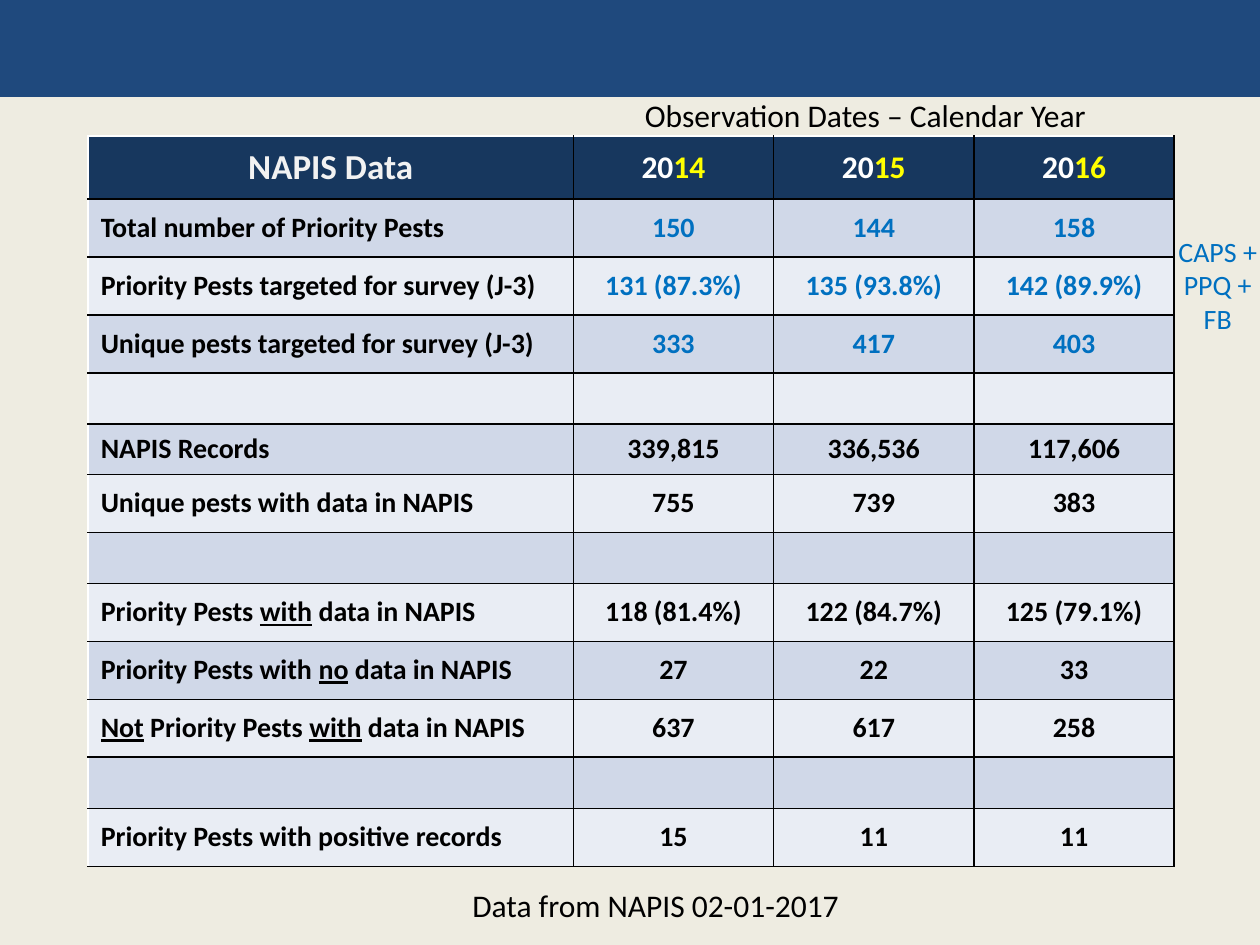
"""Build the NAPIS priority pest data slide."""
import lxml.etree
import pptx
import pptx.dml.color
import pptx.enum.shapes
import pptx.enum.text
import pptx.oxml.ns
import pptx.util

WIDTH, HEIGHT = 10, 7.5
NAVY, BLACK, WHITE, BLUE, YELLOW = "17375E", "000000", "FFFFFF", "0070C0", "FFFF00"
BANDS = ["E9EDF4", "D0D8E8"]
HEADING = "NAPIS Data"
YEARS = ["14", "15", "16"]
BLANK = ("", ["", "", ""], 0.4, BLACK)
# Underlined words stand between underscores.
RECORDS = [
    ("Total number of Priority Pests", ["150", "144", "158"], 0.46, BLUE),
    ("Priority Pests targeted for survey (J-3)",
     ["131 (87.3%)", "135 (93.8%)", "142 (89.9%)"], 0.46, BLUE),
    ("Unique pests targeted for survey (J-3)", ["333", "417", "403"], 0.46, BLUE),
    BLANK,
    ("NAPIS Records", ["339,815", "336,536", "117,606"], 0.4, BLACK),
    ("Unique pests with data in NAPIS", ["755", "739", "383"], 0.46, BLACK),
    BLANK,
    ("Priority Pests _with_ data in NAPIS",
     ["118 (81.4%)", "122 (84.7%)", "125 (79.1%)"], 0.46, BLACK),
    ("Priority Pests with _no_ data in NAPIS", ["27", "22", "33"], 0.46, BLACK),
    ("_Not_ Priority Pests _with_ data in NAPIS", ["637", "617", "258"], 0.46, BLACK),
    BLANK,
    ("Priority Pests with positive records", ["15", "11", "11"], 0.46, BLACK),
]
CAPTIONS = [
    (["Data from NAPIS 02-01-2017"], (3.65, 6.98, 3.14, 0.4), 18, BLACK),
    (["Observation Dates – Calendar Year"], (5.02, 0.71, 3.74, 0.4), 18, BLACK),
    (["CAPS +", "PPQ +", "FB"], (9.25, 1.81, 0.83, 0.91), 16, BLUE),
]
TABLE_LEFT, TABLE_TOP = 0.7, 1.08
COLUMNS = [3.85] + [1.59] * len(YEARS)
HEIGHTS = [0.5] + [height for _, _, height, _ in RECORDS]
CENTER = pptx.enum.text.PP_ALIGN.CENTER
LEFT = pptx.enum.text.PP_ALIGN.LEFT


def color(value):
    return pptx.dml.color.RGBColor.from_string(value)


def inches(values):
    return [pptx.util.Inches(value) for value in values]


def paint(fill, value):
    fill.solid()
    fill.fore_color.rgb = color(value)


def add_run(paragraph, text, size, value, bold=False, underline=False):
    run = paragraph.add_run()
    run.text = text
    font = run.font
    font.name, font.size, font.bold = "Calibri", pptx.util.Pt(size), bold
    font.color.rgb = color(value)
    if underline:
        font.underline = True


def set_borders(cell, left, top):
    properties = cell._tc.get_or_add_tcPr()
    edges = [("lnL", left), ("lnR", BLACK), ("lnT", top), ("lnB", BLACK)]
    for position, (tag, value) in enumerate(edges):
        line = lxml.etree.Element(pptx.oxml.ns.qn("a:" + tag), w="12700")
        fill = lxml.etree.SubElement(line, pptx.oxml.ns.qn("a:solidFill"))
        lxml.etree.SubElement(fill, pptx.oxml.ns.qn("a:srgbClr"), val=value)
        properties.insert(position, line)


def fill_cell(cell, runs, size, align, background, left, top):
    paint(cell.fill, background)
    set_borders(cell, left, top)
    cell.vertical_anchor = pptx.enum.text.MSO_ANCHOR.MIDDLE
    paragraph = cell.text_frame.paragraphs[0]
    paragraph.alignment = align
    for text, value, underline in runs:
        if text:
            add_run(paragraph, text, size, value, True, underline)


def add_pest_table(slide):
    frame = slide.shapes.add_table(
        len(HEIGHTS), len(COLUMNS),
        *inches([TABLE_LEFT, TABLE_TOP, sum(COLUMNS), sum(HEIGHTS)]))
    table = frame.table
    for column, width in zip(table.columns, inches(COLUMNS)):
        column.width = width
    for row, height in zip(table.rows, inches(HEIGHTS)):
        row.height = height

    fill_cell(table.cell(0, 0), [(HEADING, "F2F2F2", False)], 20, CENTER, NAVY, WHITE, WHITE)
    for column, year in enumerate(YEARS, 1):
        runs = [("20", WHITE, False), (year, YELLOW, False)]
        fill_cell(table.cell(0, column), runs, 18, CENTER, NAVY, BLACK, WHITE)

    for row, (label, counts, _, value) in enumerate(RECORDS, 1):
        band = BANDS[row % 2]
        runs = [(part, BLACK, index % 2 == 1) for index, part in enumerate(label.split("_"))]
        fill_cell(table.cell(row, 0), runs, 16, LEFT, band, WHITE, BLACK)
        for column, count in enumerate(counts, 1):
            fill_cell(table.cell(row, column), [(count, value, False)], 16, CENTER,
                      band, BLACK, BLACK)


def add_caption(slide, lines, place, size, value):
    frame = slide.shapes.add_textbox(*inches(place)).text_frame
    frame.word_wrap = False
    frame.auto_size = pptx.enum.text.MSO_AUTO_SIZE.SHAPE_TO_FIT_TEXT
    for index, line in enumerate(lines):
        paragraph = frame.add_paragraph() if index else frame.paragraphs[0]
        paragraph.alignment = CENTER if len(lines) > 1 else LEFT
        add_run(paragraph, line, size, value)


def main():
    deck = pptx.Presentation()
    deck.slide_width, deck.slide_height = inches([WIDTH, HEIGHT])
    slide = deck.slides.add_slide(deck.slide_layouts[6])
    paint(slide.background.fill, "EEECE1")
    banner = slide.shapes.add_shape(
        pptx.enum.shapes.MSO_SHAPE.RECTANGLE, *inches([0, 0, WIDTH, 0.77]))
    banner.shadow.inherit = False
    paint(banner.fill, "1F497D")
    banner.line.fill.background()
    add_pest_table(slide)
    for caption in CAPTIONS:
        add_caption(slide, *caption)
    deck.save("out.pptx")


if __name__ == "__main__":
    main()
